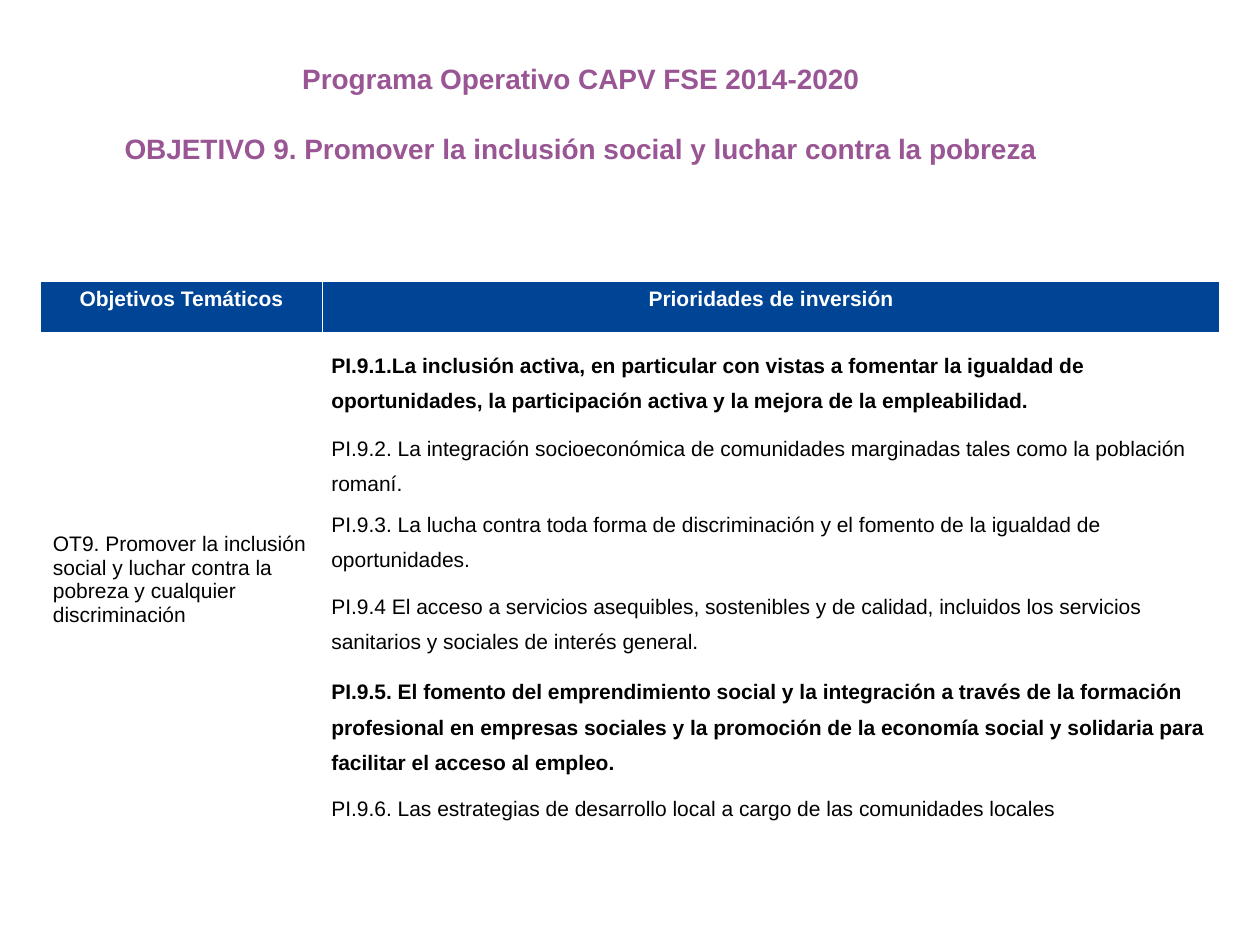
from lxml import etree
from pptx import Presentation
from pptx import util as u
from pptx.dml.color import RGBColor
from pptx.enum import text
from pptx.oxml.ns import qn

COLORS = {"title": "995594", "header": "004595", "white": "FFFFFF", "ink": "000000"}
TITLE_LINES = [
    "Programa Operativo CAPV FSE 2014-2020",
    "OBJETIVO 9. Promover la inclusión social y luchar contra la pobreza",
]
HEADINGS = ["Objetivos Temáticos", "Prioridades de inversión"]
OBJECTIVE = ("OT9. Promover la inclusión social y luchar contra la pobreza "
             "y cualquier discriminación")
# (wording, highlighted, row height in inches)
PRIORITIES = [
    ("PI.9.1.La inclusión activa, en particular con vistas a fomentar la igualdad de "
     "oportunidades, la participación activa y la mejora de la empleabilidad.", True, 0.7),
    ("PI.9.2. La integración socioeconómica de comunidades marginadas tales como la "
     "población romaní.", False, 0.61),
    ("PI.9.3. La lucha contra toda forma de discriminación y el fomento de la igualdad "
     "de oportunidades.", False, 0.6),
    ("PI.9.4 El acceso a servicios asequibles, sostenibles y de calidad, incluidos los "
     "servicios sanitarios y sociales de interés general.", False, 0.7),
    ("PI.9.5. El fomento del emprendimiento social y la integración a través de la "
     "formación profesional en empresas sociales y la promoción de la economía social y "
     "solidaria para facilitar el acceso al empleo.", True, 0.94),
    ("PI.9.6. Las estrategias de desarrollo local a cargo de las comunidades locales",
     False, 0.35),
]
HEADER_HEIGHT = 0.42
COLUMN_WIDTHS = [2.24, 7.12]
WIDE_MARGINS = (0.1, 0.05)
TIGHT_MARGINS = (0.07, 0)


def set_all(target, values):
    for name, value in values.items():
        setattr(target, name, value)


def format_paragraph(paragraph, color, size, bold, **layout):
    set_all(paragraph, layout)
    set_all(paragraph.font, {"name": "Arial", "size": u.Pt(size), "bold": bold})
    paragraph.font.color.rgb = RGBColor.from_string(COLORS[color])


def add_title(slide):
    title = slide.shapes.title
    set_all(title, {"left": u.Inches(0.67), "top": u.Inches(0.44),
                    "width": u.Inches(7.88), "height": u.Inches(0.91)})
    frame = title.text_frame
    set_all(frame, {"text": "\n".join(TITLE_LINES), "word_wrap": True,
                    "vertical_anchor": text.MSO_ANCHOR.TOP,
                    "auto_size": text.MSO_AUTO_SIZE.SHAPE_TO_FIT_TEXT})
    for index, paragraph in enumerate(frame.paragraphs):
        format_paragraph(paragraph, "title", 16, True,
                         alignment=text.PP_ALIGN.CENTER,
                         space_before=u.Pt(20.7 if index else 0))


def set_borders(cell, heavy_side=None):
    """White 1 pt rules, with 3 pt on the heavy side."""
    properties = cell._tc.get_or_add_tcPr()
    for side in "LRTB":
        width = u.Pt(3 if side == heavy_side else 1)
        line = etree.SubElement(properties, qn(f"a:ln{side}"), w=str(width))
        fill = etree.SubElement(line, qn("a:solidFill"))
        etree.SubElement(fill, qn("a:srgbClr"), val=COLORS["white"])


def fill_cell(cell, wording, margins, color="ink", bold=False, background="white",
              anchor=text.MSO_ANCHOR.MIDDLE, heavy_side=None, **layout):
    across, down = map(u.Inches, margins)
    set_all(cell, {"text": wording, "vertical_anchor": anchor,
                   "margin_left": across, "margin_right": across,
                   "margin_top": down, "margin_bottom": down})
    set_borders(cell, heavy_side)
    if background:
        cell.fill.solid()
        cell.fill.fore_color.rgb = RGBColor.from_string(COLORS[background])
    else:
        cell.fill.background()
    format_paragraph(cell.text_frame.paragraphs[0], color, 12, bold, **layout)


def add_priorities_table(slide):
    heights = [HEADER_HEIGHT] + [height for _, _, height in PRIORITIES]
    table = slide.shapes.add_table(
        len(heights), len(COLUMN_WIDTHS), u.Inches(0.32), u.Inches(2.23),
        u.Inches(sum(COLUMN_WIDTHS)), u.Inches(sum(heights))).table
    table.horz_banding = False
    for column, width in zip(table.columns, COLUMN_WIDTHS):
        column.width = u.Inches(width)
    for row, height in zip(table.rows, heights):
        row.height = u.Inches(height)

    for column, heading in enumerate(HEADINGS):
        fill_cell(table.cell(0, column), heading, WIDE_MARGINS, "white", True, "header",
                  text.MSO_ANCHOR.TOP, "B", alignment=text.PP_ALIGN.CENTER)
    objective = table.cell(1, 0)
    objective.merge(table.cell(len(PRIORITIES), 0))
    fill_cell(objective, OBJECTIVE, WIDE_MARGINS, background=None, heavy_side="T")
    for row, (wording, highlighted, _) in enumerate(PRIORITIES, start=1):
        fill_cell(table.cell(row, 1), wording, TIGHT_MARGINS, bold=highlighted,
                  heavy_side="T" if row == 1 else None, line_spacing=1.5)


def main():
    deck = Presentation()
    set_all(deck, {"slide_width": u.Inches(10), "slide_height": u.Inches(7.5)})
    slide = deck.slides.add_slide(deck.slide_layouts.get_by_name("Title Only"))
    add_title(slide)
    add_priorities_table(slide)
    deck.save("out.pptx")


if __name__ == "__main__":
    main()
